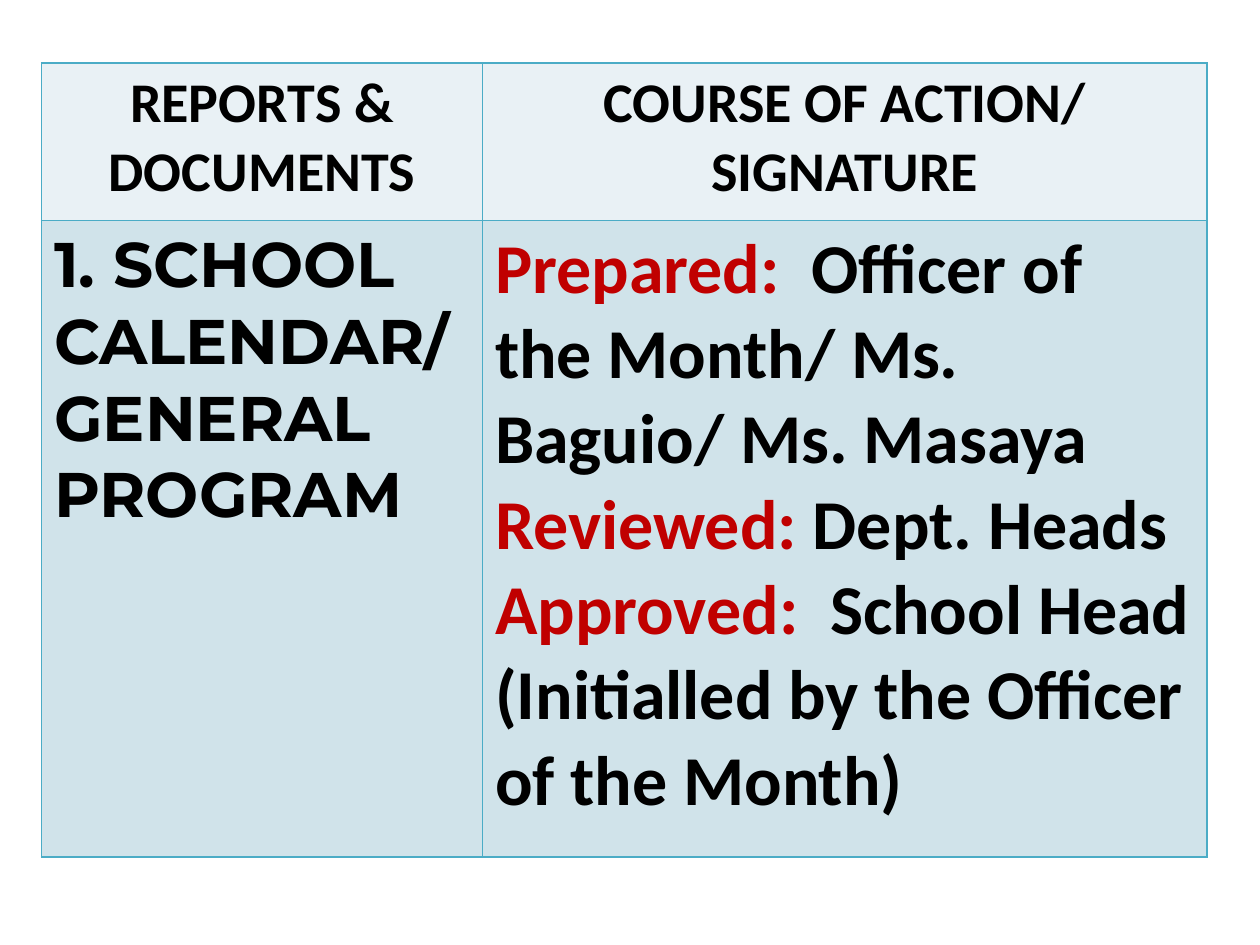
from dataclasses import dataclass

from lxml import etree
from pptx import Presentation
from pptx import util as u
from pptx.dml.color import RGBColor
from pptx.enum import text
from pptx.oxml.ns import qn
from pptx.table import _Cell as Cell

BLACK = RGBColor(0x00, 0x00, 0x00)
RED = RGBColor(0xC0, 0x00, 0x00)
TEAL = RGBColor(0x4B, 0xAC, 0xC6)
HEADER_FILL = RGBColor(0xE9, 0xF1, 0xF5)
BODY_FILL = RGBColor(0xD0, 0xE3, 0xEA)

SLIDE_W, SLIDE_H = u.Inches(10), u.Inches(7.5)
LEFT, TOP = u.Inches(0.33), u.Inches(0.5)
COLUMNS = [u.Inches(3.5), u.Inches(5.75)]
ROWS = [u.Inches(1.25), u.Inches(5.05)]


@dataclass(frozen=True)
class Line:
    """One paragraph: an optional red label followed by black wording."""
    wording: str
    label: str = ""


@dataclass(frozen=True)
class CellContent:
    lines: tuple[Line, ...]
    size: int
    fill: RGBColor
    font: str = "Calibri"
    align: text.PP_ALIGN = text.PP_ALIGN.LEFT


def header(wording: str) -> CellContent:
    return CellContent((Line(wording),), 32, HEADER_FILL, align=text.PP_ALIGN.CENTER)


CONTENT = [
    [header("REPORTS & DOCUMENTS"), header("COURSE OF ACTION/ SIGNATURE")],
    [
        CellContent((Line("1. SCHOOL CALENDAR/ GENERAL PROGRAM"),), 36, BODY_FILL, "Montserrat"),
        CellContent((
            Line("Officer of the Month/ Ms. Baguio/ Ms. Masaya", "Prepared:  "),
            Line("Dept. Heads", "Reviewed: "),
            Line("School Head (Initialled by the Officer of the Month)", "Approved:  "),
        ), 40, BODY_FILL),
    ],
]


def set_borders(cell: Cell, color: RGBColor, width: u.Length) -> None:
    props = cell._tc.get_or_add_tcPr()
    for index, side in enumerate(("a:lnL", "a:lnR", "a:lnT", "a:lnB")):
        ln = etree.Element(qn(side), w=str(width))
        fill = etree.SubElement(ln, qn("a:solidFill"))
        etree.SubElement(fill, qn("a:srgbClr"), val=str(color))
        props.insert(index, ln)  # borders must precede the cell's fill


def fill_cell(cell: Cell, content: CellContent) -> None:
    cell.fill.solid()
    cell.fill.fore_color.rgb = content.fill
    set_borders(cell, TEAL, u.Pt(1))
    tf = cell.text_frame
    for index, line in enumerate(content.lines):
        p = tf.add_paragraph() if index else tf.paragraphs[0]
        p.alignment = content.align
        p.font.name = content.font
        p.font.size = u.Pt(content.size)
        p.font.bold = True
        for wording, color in ((line.label, RED), (line.wording, BLACK)):
            if wording:
                r = p.add_run()
                r.text = wording
                r.font.color.rgb = color


def main() -> None:
    prs = Presentation()
    prs.slide_width, prs.slide_height = SLIDE_W, SLIDE_H
    slide = prs.slides.add_slide(prs.slide_layouts[6])
    table = slide.shapes.add_table(
        len(ROWS), len(COLUMNS), LEFT, TOP, sum(COLUMNS), sum(ROWS)
    ).table
    for column, width in zip(table.columns, COLUMNS):
        column.width = width
    for row, height, contents in zip(table.rows, ROWS, CONTENT):
        row.height = height
        for cell, content in zip(row.cells, contents):
            fill_cell(cell, content)
    prs.save("out.pptx")


if __name__ == "__main__":
    main()
